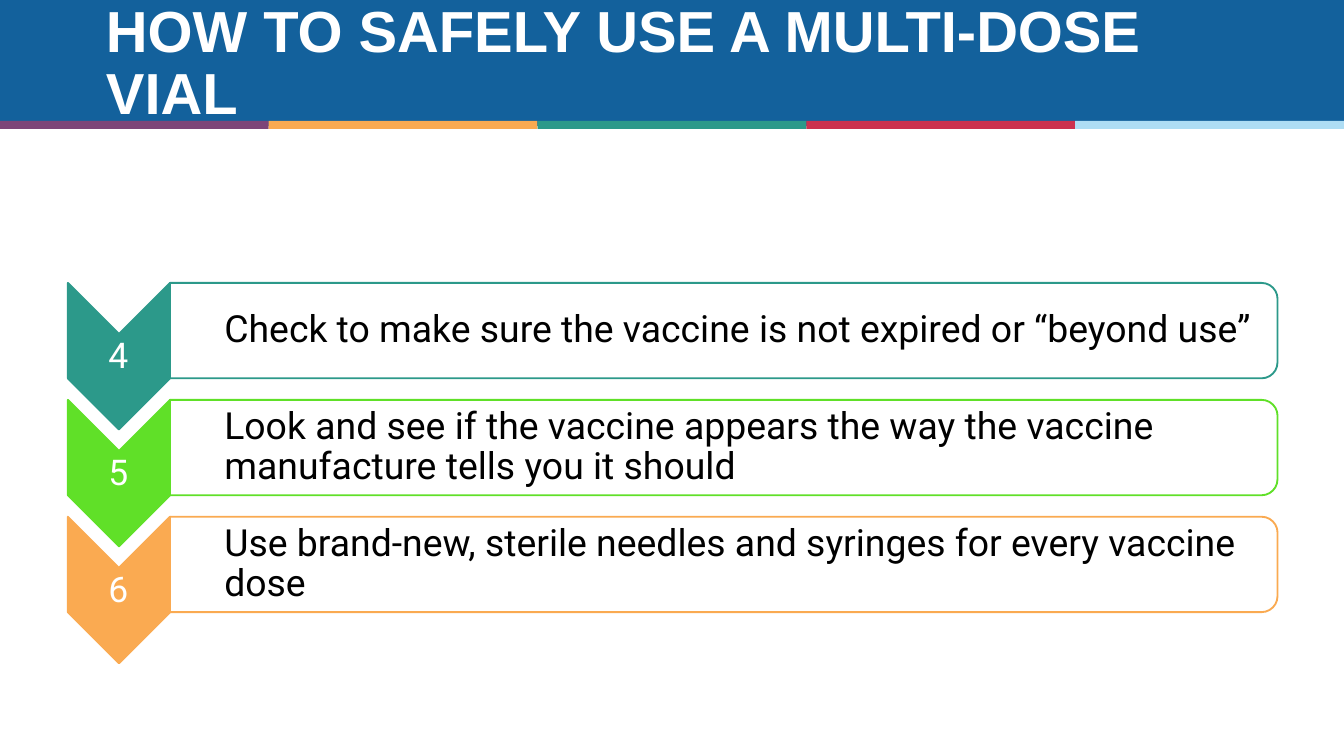
from lxml import etree
from pptx import Presentation
from pptx import util as u
from pptx.dml.color import RGBColor
from pptx.enum import shapes, text
from pptx.oxml.ns import qn

COLOURS = {
    "blue": "13619C", "purple": "7D4578", "orange": "FAAA51", "teal": "2C998A",
    "red": "CC314E", "sky": "AEDDF4", "green": "60E028",
    "white": "FFFFFF", "black": "000000",
}
STRIPES = ["purple", "orange", "teal", "red", "sky"]
STEPS = [
    ("4", "teal", "Check to make sure the vaccine is not expired or “beyond use”"),
    ("5", "green", "Look and see if the vaccine appears the way the vaccine manufacture tells you it should"),
    ("6", "orange", "Use brand-new, sterile needles and syringes for every vaccine dose"),
]
FORMATS = {
    "title": {"name": "Arial", "size": u.Pt(31), "bold": True},
    "number": {"name": "Roboto", "size": u.Pt(19)},
    "step": {"name": "Roboto", "size": u.Pt(20)},
}
PAGE_WIDTH = 10
PAGE_HEIGHT = PAGE_WIDTH * 9 / 16
STEP_TOP, STEP_PITCH = 2.14, 0.87


class SlideBuilder:
    """Holds the text styles and the page being filled."""

    def __init__(self, page, formats):
        self.page = page
        self.formats = formats

    def shape(self, kind, place, fill, line=None, turn=0, opacity=100):
        shape = self.page.shapes.add_shape(kind, *map(u.Inches, place))
        shape.shadow.inherit = False
        shape.rotation = turn
        shape.fill.solid()
        shape.fill.fore_color.rgb = RGBColor.from_string(COLOURS[fill])
        if opacity < 100:
            colour = shape.fill._xPr.find(qn("a:solidFill"))[0]
            etree.SubElement(colour, qn("a:alpha"), val=str(opacity * 1000))
        if line:
            shape.line.color.rgb = RGBColor.from_string(COLOURS[line])
            shape.line.width = u.Pt(1)
        else:
            shape.line.fill.background()

    def text(self, words, place, style, colour, align="LEFT",
             insets=(0.1, 0.05, 0.1, 0.05), indent=0):
        box = self.page.shapes.add_textbox(*map(u.Inches, place))
        frame = box.text_frame
        frame.word_wrap = True
        frame.vertical_anchor = text.MSO_ANCHOR.MIDDLE
        for side, inset in zip(("left", "top", "right", "bottom"), insets):
            setattr(frame, f"margin_{side}", u.Inches(inset))
        para = frame.paragraphs[0]
        para.alignment = text.PP_ALIGN[align]
        para.line_spacing = 0.9
        if indent:
            para._p.get_or_add_pPr().set("marL", str(u.Inches(indent)))
        span = para.add_run()
        span.text = words
        for name, value in self.formats[style].items():
            setattr(span.font, name, value)
        span.font.color.rgb = RGBColor.from_string(COLOURS[colour])

    def step(self, number, colour, words, top):
        """A numbered chevron with its rounded panel; both are turned upright."""
        kinds = shapes.MSO_SHAPE
        small = (0.01,) * 4
        self.shape(kinds.CHEVRON, (0.34, top + 0.13, 1.09, 0.76),
                   colour, line=colour, turn=90)
        self.text(number, (0.5, top + 0.35, 0.76, 0.33), "number", "white",
                  align="CENTER", insets=small)
        self.shape(kinds.ROUND_2_SAME_RECTANGLE, (5.03, top - 3.8, 0.71, 8.24),
                   "white", line=colour, turn=90, opacity=90)
        self.text(words, (1.26, top, 8.2, 0.64), "step", "black",
                  insets=(0.16, *small[1:]), indent=0.25)


def main():
    deck = Presentation()
    deck.slide_width = u.Inches(PAGE_WIDTH)
    deck.slide_height = u.Inches(PAGE_HEIGHT)
    page = deck.slides.add_slide(deck.slide_layouts[6])
    builder = SlideBuilder(page, FORMATS)

    # Header band with its row of stripes
    rectangle = shapes.MSO_SHAPE.RECTANGLE
    builder.shape(rectangle, (0, 0, PAGE_WIDTH, 0.94), "blue")
    width = PAGE_WIDTH / len(STRIPES)
    for index, colour in enumerate(STRIPES):
        builder.shape(rectangle, (index * width, 0.9, width, 0.06), colour)
    builder.text("HOW TO SAFELY USE A MULTI-DOSE VIAL", (0.69, 0.19, 8.62, 0.58),
                 "title", "white")

    # Numbered steps
    for index, (number, colour, words) in enumerate(STEPS):
        builder.step(number, colour, words, STEP_TOP + index * STEP_PITCH)

    deck.save("out.pptx")


if __name__ == "__main__":
    main()
